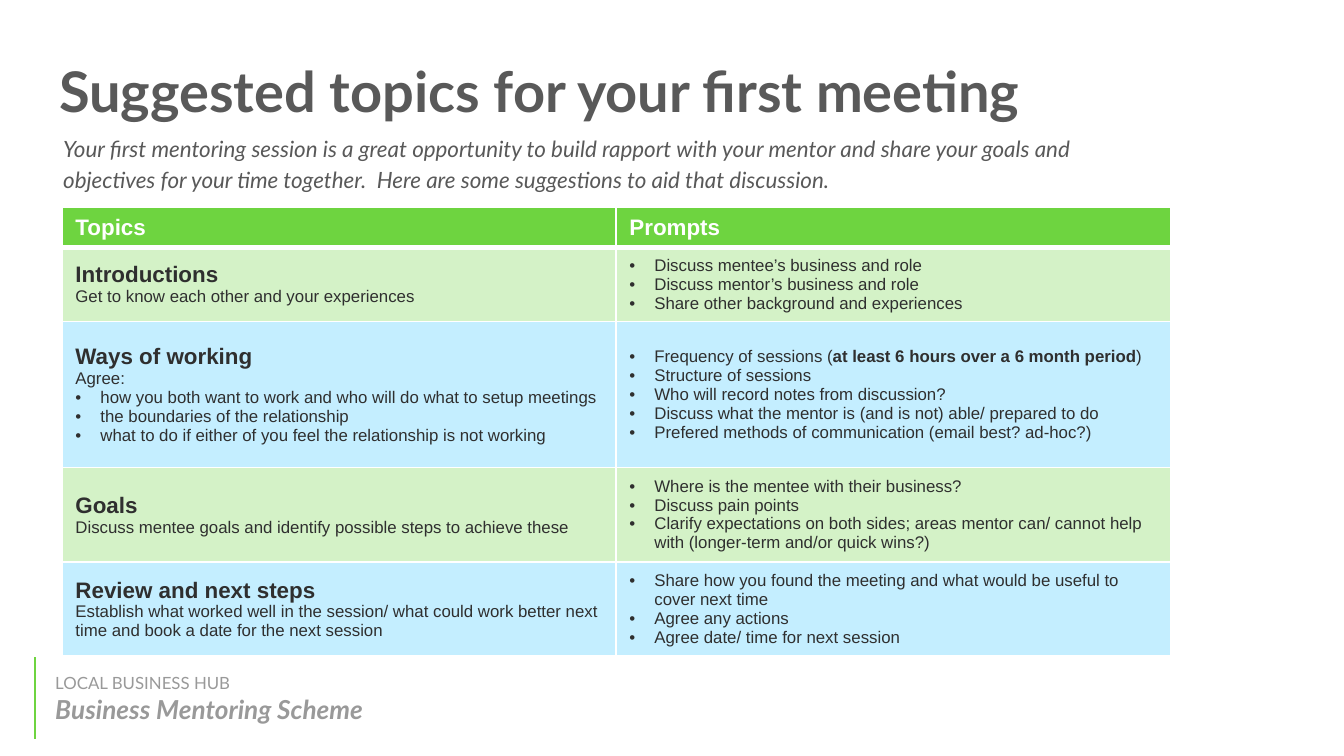
from lxml import etree
from pptx import Presentation
from pptx import util as u
from pptx.dml.color import RGBColor
from pptx.enum import shapes, text
from pptx.oxml import ns

PX = 914400 / 134.4
GREEN, BLUE, WHITE = "6ED440", "00B9FF", "FFFFFF"
DARK, GREY, PALE = "2F2F2F", "595959", "999999"

TOPICS = [
    ("Introductions", "Get to know each other and your experiences", [],
     ["Discuss mentee’s business and role",
      "Discuss mentor’s business and role",
      "Share other background and experiences"]),
    ("Ways of working", "Agree:",
     ["how you both want to work and who will do what to setup meetings",
      "the boundaries of the relationship",
      "what to do if either of you feel the relationship is not working"],
     ["Frequency of sessions (**at least 6 hours over a 6 month period**)",
      "Structure of sessions",
      "Who will record notes from discussion?",
      "Discuss what the mentor is (and is not) able/ prepared to do",
      "Prefered methods of communication (email best? ad-hoc?)"]),
    ("Goals", "Discuss mentee goals and identify possible steps to achieve these", [],
     ["Where is the mentee with their business?",
      "Discuss pain points",
      "Clarify expectations on both sides; areas mentor can/ cannot help "
      "with (longer-term and/or quick wins?)"]),
    ("Review and next steps",
     "Establish what worked well in the session/ what could work better next "
     "time and book a date for the next session", [],
     ["Share how you found the meeting and what would be useful to cover next time",
      "Agree any actions",
      "Agree date/ time for next session"]),
]


def px(length):
    return u.Emu(round(length * PX))


def rgb(hex_colour):
    return RGBColor.from_string(hex_colour)


def add_xml(parent, tag, **attributes):
    return etree.SubElement(parent, ns.qn(tag), attributes)


class Deck:
    HEADER = dict(name="Arial", size=12, bold=True, color=WHITE)
    TOPIC = dict(HEADER, color=DARK)
    NOTE = dict(TOPIC, size=9, bold=False)

    def __init__(self, width, height):
        self.presentation = Presentation()
        self.presentation.slide_width = px(width)
        self.presentation.slide_height = px(height)
        self.slide = self.presentation.slides.add_slide(self.presentation.slide_layouts[6])

    def line(self, x1, y1, x2, y2, colour, width):
        rule = self.slide.shapes.add_connector(
            shapes.MSO_CONNECTOR.STRAIGHT, px(x1), px(y1), px(x2), px(y2))
        rule.line.color.rgb = rgb(colour)
        rule.line.width = u.Pt(width)
        add_xml(rule._element.spPr, "a:effectLst")

    def paragraphs(self, frame, entries):
        """Fill a frame from (words, style, bulleted); ** switches bold on and off."""
        for index, (words, style, bulleted) in enumerate(entries):
            paragraph = frame.add_paragraph() if index else frame.paragraphs[0]
            if bulleted:
                self.bullet(paragraph, style["color"])
            for part, piece in enumerate(words.split("**")):
                run = paragraph.add_run()
                run.text = piece
                for key, value in style.items():
                    if key == "color":
                        run.font.color.rgb = rgb(value)
                    else:
                        setattr(run.font, key, u.Pt(value) if key == "size" else value)
                if part % 2:
                    run.font.bold = True

    def bullet(self, paragraph, colour):
        properties = paragraph._p.get_or_add_pPr()
        properties.set("marL", str(px(25)))
        properties.set("indent", str(-px(25)))
        add_xml(add_xml(properties, "a:buClr"), "a:srgbClr", val=colour)
        add_xml(properties, "a:buFont", typeface="Arial")
        add_xml(properties, "a:buChar", char="•")

    def text_box(self, x, y, width, height, entries, anchor="TOP", **spacing):
        frame = self.slide.shapes.add_textbox(px(x), px(y), px(width), px(height)).text_frame
        frame.word_wrap = True
        frame.vertical_anchor = text.MSO_ANCHOR[anchor]
        for side in ("left", "top", "right", "bottom"):
            setattr(frame, f"margin_{side}", u.Inches(0.1))
        self.paragraphs(frame, entries)
        for key, value in spacing.items():
            for paragraph in frame.paragraphs:
                setattr(paragraph, key, value)

    def table(self, x, y, widths, heights):
        grid = self.slide.shapes.add_table(
            len(heights), len(widths), px(x), px(y), px(sum(widths)), px(sum(heights))).table
        for column, width in zip(grid.columns, widths):
            column.width = px(width)
        for row, height in zip(grid.rows, heights):
            row.height = px(height)
        return grid

    def cell(self, cell, entries, fill, opacity=100, top=1, bottom=1):
        properties = cell._tc.get_or_add_tcPr()
        for side, width in dict(L=1, R=1, T=top, B=bottom).items():
            border = add_xml(properties, f"a:ln{side}", w=str(u.Pt(width)))
            add_xml(add_xml(border, "a:solidFill"), "a:srgbClr", val=WHITE)
        cell.fill.solid()
        cell.fill.fore_color.rgb = rgb(fill)
        if opacity < 100:
            colour = properties.find(ns.qn("a:solidFill")).find(ns.qn("a:srgbClr"))
            add_xml(colour, "a:alpha", val=str(opacity * 1000))
        cell.vertical_anchor = text.MSO_ANCHOR.MIDDLE
        self.paragraphs(cell.text_frame, entries)


def main():
    deck = Deck(1344, 756)
    scheme = dict(name="Lato", size=9, color=PALE)
    title = dict(name="Lato", size=30, color=GREY, bold=True)
    intro = dict(name="Lato", size=12, color=GREY, italic=True)

    deck.line(35, 739, 35, 657, GREEN, 1.5)
    deck.text_box(42, 652, 488, 93, [
        ("LOCAL BUSINESS HUB", scheme, False),
        ("Business Mentoring Scheme", dict(scheme, size=14, bold=True, italic=True), False),
    ], anchor="MIDDLE")
    deck.text_box(46, 43, 1253, 85, [("Suggested topics for your first meeting", title, False)])
    deck.text_box(50, 118, 1121, 70, [(
        "Your first mentoring session is a great opportunity to build rapport with your "
        "mentor and share your goals and objectives for your time together.  Here are some "
        "suggestions to aid that discussion.", intro, False,
    )], line_spacing=1.15, space_after=u.Pt(10))

    agenda = deck.table(62, 207, [554, 555], [40, 74, 146, 93, 93])
    for column, heading in enumerate(["Topics", "Prompts"]):
        deck.cell(agenda.cell(0, column), [(heading, deck.HEADER, False)], GREEN, bottom=3)
    for row, (topic, note, points, prompts) in enumerate(TOPICS, start=1):
        fill, opacity = (GREEN, 29) if row % 2 else (BLUE, 23)
        summary = [(topic, deck.TOPIC, False), (note, deck.NOTE, False)]
        summary += [(point, deck.NOTE, True) for point in points]
        questions = [(prompt, deck.NOTE, True) for prompt in prompts]
        for column, entries in enumerate([summary, questions]):
            deck.cell(agenda.cell(row, column), entries, fill, opacity,
                      top=3 if row == 1 else 1)

    deck.presentation.save("out.pptx")


if __name__ == "__main__":
    main()
